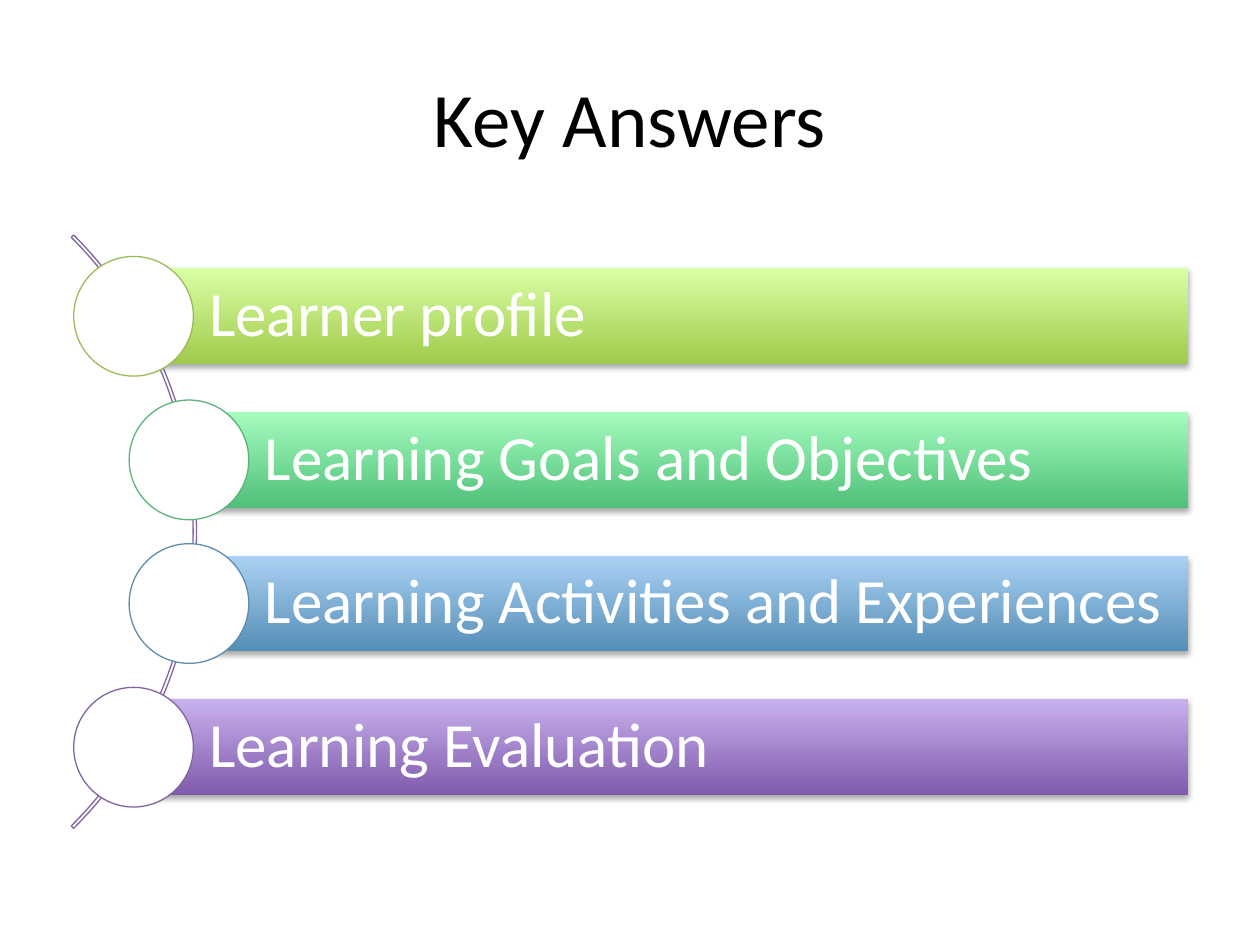
import pptx
import pptx.util
import pptx.dml.color
import pptx.enum.shapes
import pptx.enum.text
import pptx.oxml
import pptx.oxml.ns

Inches = pptx.util.Inches
Pt = pptx.util.Pt
RGBColor = pptx.dml.color.RGBColor
MSO_SHAPE = pptx.enum.shapes.MSO_SHAPE
PP_ALIGN = pptx.enum.text.PP_ALIGN
MSO_ANCHOR = pptx.enum.text.MSO_ANCHOR

BLACK = RGBColor(0x00, 0x00, 0x00)
WHITE = RGBColor(0xFF, 0xFF, 0xFF)
PURPLE = RGBColor(0x80, 0x64, 0xA2)

# label, indented, bar bottom colour, bar top colour, circle outline
ROWS = [
    ("Learner profile", False,
     RGBColor(0xA0, 0xCA, 0x4A), RGBColor(0xDA, 0xFF, 0xA5), RGBColor(0x9B, 0xBB, 0x59)),
    ("Learning Goals and Objectives", True,
     RGBColor(0x4F, 0xC0, 0x79), RGBColor(0xA5, 0xFC, 0xBE), RGBColor(0x5C, 0xB3, 0x7C)),
    ("Learning Activities and Experiences", True,
     RGBColor(0x55, 0x8E, 0xB6), RGBColor(0xAB, 0xD1, 0xF4), RGBColor(0x60, 0x8C, 0xAB)),
    ("Learning Evaluation", False,
     RGBColor(0x7F, 0x5B, 0xAB), RGBColor(0xC8, 0xB0, 0xED), PURPLE),
]
SHADOW = (
    f'<a:outerShdw {pptx.oxml.ns.nsdecls("a")} blurRad="40000" dist="23000" '
    'dir="5400000" rotWithShape="0"><a:srgbClr val="000000">'
    '<a:alpha val="35000"/></a:srgbClr></a:outerShdw>'
)


def set_text(sp, text, size, color, align):
    tf = sp.text_frame
    tf.word_wrap = True
    tf.vertical_anchor = MSO_ANCHOR.MIDDLE
    tf.text = text
    p = tf.paragraphs[0]
    p.alignment = align
    font = p.runs[0].font
    font.name = "Calibri"
    font.size = Pt(size)
    font.color.rgb = color
    return tf


prs = pptx.Presentation()
prs.slide_width, prs.slide_height = Inches(10), Inches(7.5)
s = prs.slides.add_slide(prs.slide_layouts[6])

# Title
sp = s.shapes.add_textbox(Inches(0.5), Inches(0.3), Inches(9), Inches(1.25))
set_text(sp, "Key Answers", 44, BLACK, PP_ALIGN.CENTER)

# Arc behind the circles
sp = s.shapes.add_shape(MSO_SHAPE.BLOCK_ARC, Inches(-5.1), Inches(0.89),
                        Inches(6.66), Inches(6.66))
for i, value in enumerate((189, 27, 0.004)):
    sp.adjustments[i] = value
sp.fill.background()
sp.line.color.rgb = PURPLE
sp.line.width = Pt(0.75)
sp.shadow.inherit = False

# Bars with a circle centred on each left end
bar_h, circle_d, right = 0.76, 0.95, 9.43
first_y, step = 2.51, 1.14
for i, (label, indented, bottom, top, outline) in enumerate(ROWS):
    x = 1.5 if indented else 1.06
    y = first_y + i * step

    sp = s.shapes.add_shape(MSO_SHAPE.RECTANGLE, Inches(x), Inches(y - bar_h / 2),
                            Inches(right - x), Inches(bar_h))
    sp.fill.gradient()
    sp.fill.gradient_angle = 90
    for stop, color in zip(sp.fill.gradient_stops, (bottom, top)):
        stop.color.rgb = color
    sp.line.fill.background()
    sp.shadow.inherit = False
    effects = sp._element.spPr.find(pptx.oxml.ns.qn("a:effectLst"))
    effects.append(pptx.oxml.parse_xml(SHADOW))
    tf = set_text(sp, label, 36, WHITE, PP_ALIGN.LEFT)
    tf.margin_left = Inches(0.6)
    tf.margin_right = tf.margin_top = tf.margin_bottom = Inches(0.1)
    tf.paragraphs[0].line_spacing = 0.9

    sp = s.shapes.add_shape(MSO_SHAPE.OVAL, Inches(x - circle_d / 2),
                            Inches(y - circle_d / 2), Inches(circle_d), Inches(circle_d))
    sp.fill.solid()
    sp.fill.fore_color.rgb = WHITE
    sp.line.color.rgb = outline
    sp.line.width = Pt(0.75)
    sp.shadow.inherit = False

prs.save("out.pptx")
